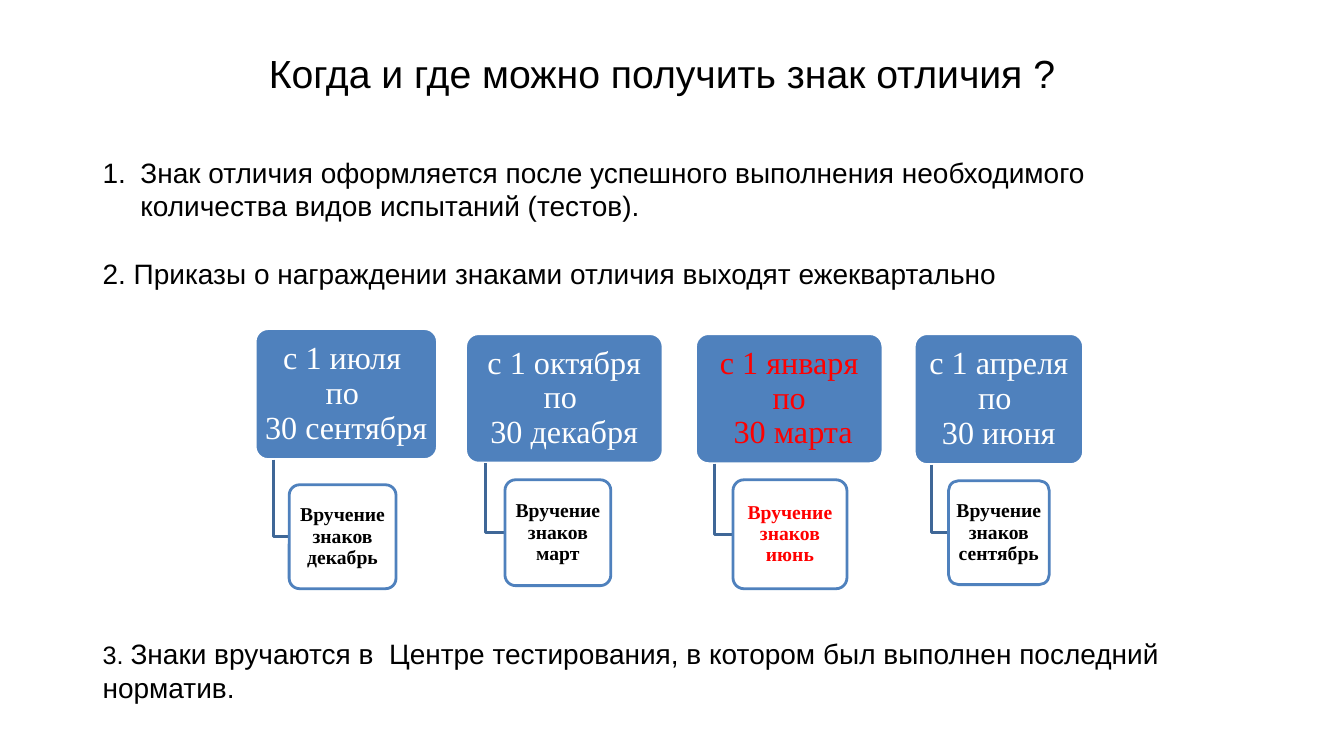
from lxml import etree
from pptx import Presentation
from pptx.dml.color import RGBColor
from pptx.enum.shapes import MSO_SHAPE as Shape
from pptx.enum.text import MSO_ANCHOR as Anchor, MSO_AUTO_SIZE as AutoSize, PP_ALIGN as Align
from pptx.oxml.ns import qn
from pptx.util import Pt

COLORS = {"black": "000000", "white": "FFFFFF", "red": "FF0000",
          "blue": "4F81BD", "elbow": "3F6797"}


def color(name):
    return RGBColor.from_string(COLORS[name])


def add_card(frame, text, fill, line, size, ink, inset):
    card = page.shapes.add_shape(Shape.ROUNDED_RECTANGLE, *map(Pt, frame))
    card.adjustments[0] = 0.1
    card.shadow.inherit = False
    card.fill.solid()
    card.fill.fore_color.rgb = color(fill)
    card.line.color.rgb = color(line)
    card.line.width = Pt(2)
    body = card.text_frame
    body.word_wrap = True
    body.vertical_anchor = Anchor.MIDDLE
    body.margin_left = body.margin_right = Pt(inset)
    body.margin_top = body.margin_bottom = Pt(inset * 0.6)
    para = body.paragraphs[0]
    para.text = text
    para.alignment = Align.CENTER
    para.line_spacing = 0.9
    para.font.name = "Times New Roman"
    para.font.size = Pt(size)
    para.font.color.rgb = color(ink)
    return card


deck = Presentation()
deck.slide_width, deck.slide_height = Pt(960), Pt(540)
page = deck.slides.add_slide(deck.slide_layouts[6])

# Title and numbered statements: frame, size, paragraphs
texts = [
    ((185, 31.7, 612, 41), 28, ["Когда и где можно получить знак отличия ?"]),
    ((66.2, 107.3, 822, 104.4), 20, [
        "Знак отличия оформляется после успешного выполнения необходимого "
        "количества видов испытаний (тестов).",
        "2. Приказы о награждении знаками отличия выходят ежеквартально"]),
    ((66.2, 451.4, 850, 55.4), 20, [
        "3. |Знаки вручаются в  Центре тестирования, в котором был выполнен "
        "последний норматив."]),
]
for frame, size, lines in texts:
    box = page.shapes.add_textbox(*map(Pt, frame))
    body = box.text_frame
    body.word_wrap = True
    body.auto_size = AutoSize.SHAPE_TO_FIT_TEXT
    for index, line in enumerate(lines):
        para = body.paragraphs[0] if index == 0 else body.add_paragraph()
        for part in line.split("|"):
            span = para.add_run()
            span.text = part
        if index:
            para.space_before = Pt(24)
        elif len(lines) > 1:
            # Automatic number with a hanging indent
            props = para._p.get_or_add_pPr()
            props.set("marL", str(Pt(27)))
            props.set("indent", str(Pt(-27)))
            etree.SubElement(props, qn("a:buFont"), typeface="Arial")
            etree.SubElement(props, qn("a:buAutoNum"), type="arabicPeriod")
        para.font.name = "Arial"
        para.font.size = Pt(size)
        para.font.color.rgb = color("black")
        if len(para.runs) > 1:
            para.runs[0].font.size = Pt(18)

# Quarters: period card, award card, and the elbow joining them
quarters = [
    ("с 1 июля \nпо \n30 сентября", (182.2, 234.7, 130.3, 93.6),
     "декабрь", (206.6, 346.3, 76.3, 74.2), "white", "black"),
    ("с 1 октября по \n30 декабря", (332.6, 238.3, 141.1, 92.5),
     "март", (360.7, 342.7, 75.6, 75.6), "white", "black"),
    ("с 1 января по\n 30 марта", (496.8, 238.3, 133.9, 92.9),
     "июнь", (523.6, 342.7, 81.4, 77.8), "red", "red"),
    ("с 1 апреля по \n30 июня", (653, 238.3, 121, 93.6),
     "сентябрь", (677.5, 343.4, 72, 74.2), "white", "black"),
]
for period, top, month, low, period_ink, award_ink in quarters:
    add_card(top, period, "blue", "white", 23, period_ink, 3.6)

    stem = top[0] + top[2] / 10
    middle = low[1] + low[3] / 2
    outline = page.shapes.build_freeform(Pt(stem), Pt(top[1] + top[3]))
    outline.add_line_segments(
        [(Pt(stem), Pt(middle)), (Pt(low[0]), Pt(middle))], close=False)
    elbow = outline.convert_to_shape()
    elbow.shadow.inherit = False
    elbow.fill.background()
    elbow.line.color.rgb = color("elbow")
    elbow.line.width = Pt(2)

    award = add_card(low, f"Вручение знаков {month}", "white", "blue", 14, award_ink, 2.1)
    award.text_frame.paragraphs[0].font.bold = True
    tint = award.fill._xPr.find(qn("a:solidFill"))[0]
    etree.SubElement(tint, qn("a:alpha"), val="90000")

deck.save("out.pptx")
